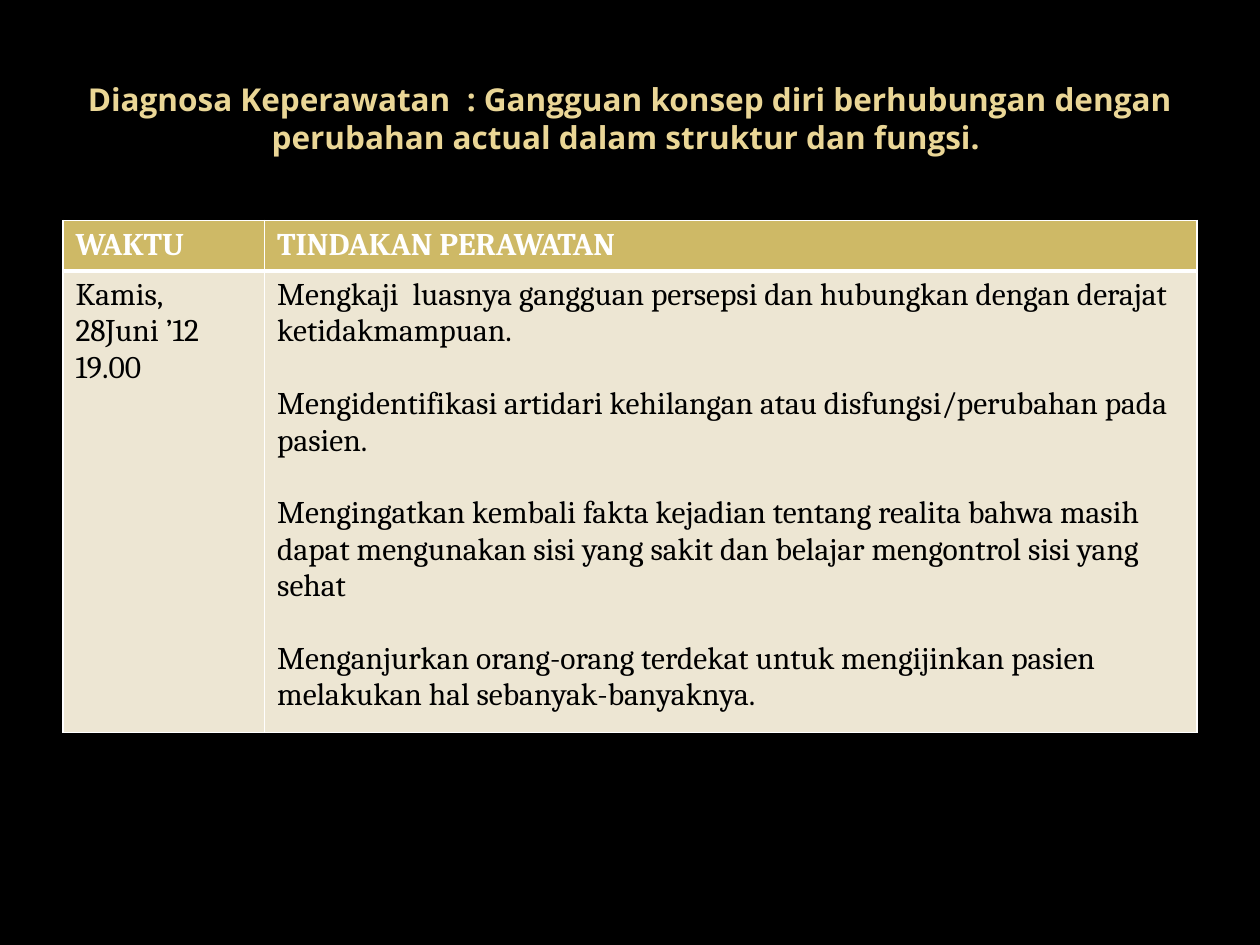
import pptx
import pptx.util
import pptx.dml.color
import pptx.enum.text
import pptx.oxml
import pptx.oxml.ns

RGBColor = pptx.dml.color.RGBColor
BLACK = RGBColor(0x00, 0x00, 0x00)
WHITE = RGBColor(0xFF, 0xFF, 0xFF)
CREAM = RGBColor(0xEA, 0xD6, 0x96)
GOLD = RGBColor(0xCE, 0xB9, 0x66)
SAND = RGBColor(0xED, 0xE6, 0xD3)

TITLE = ("Diagnosa Keperawatan  : Gangguan konsep diri berhubungan dengan "
         "perubahan actual dalam struktur dan fungsi. ")
HEADERS = ["WAKTU", "TINDAKAN PERAWATAN"]
TIME = ["Kamis,", "28Juni ’12", "19.00"]
ACTIONS = [
    "Mengkaji  luasnya gangguan persepsi dan hubungkan dengan derajat  ketidakmampuan.",
    "Mengidentifikasi artidari kehilangan atau disfungsi/perubahan pada pasien.",
    "Mengingatkan kembali fakta kejadian tentang realita bahwa masih dapat mengunakan "
    "sisi yang sakit dan belajar mengontrol sisi yang sehat",
    "Menganjurkan orang-orang terdekat untuk mengijinkan pasien melakukan hal "
    "sebanyak-banyaknya.",
]


class CareSlide:
    title_font = "Open Sans"
    table_font = "Cambria"
    text_size = pptx.util.Pt(18)
    paragraph_gap = pptx.util.Pt(20.75)
    thin, thick = 1, 3

    def __init__(self, presentation):
        self.width = presentation.slide_width
        self.height = presentation.slide_height
        self.slide = presentation.slides.add_slide(presentation.slide_layouts[6])
        self.slide.background.fill.solid()
        self.slide.background.fill.fore_color.rgb = BLACK

    def area(self, left, top, width, height):
        return (round(left * self.width), round(top * self.height),
                round(width * self.width), round(height * self.height))

    def add_text(self, frame, lines, font, color, bold=False, gap=0, alignment=None):
        for index, line in enumerate(lines):
            paragraph = frame.add_paragraph() if index else frame.paragraphs[0]
            paragraph.alignment = alignment
            if index and gap:
                paragraph.space_before = gap
            run = paragraph.add_run()
            run.text = line
            run.font.name = font
            run.font.size = self.text_size
            run.font.bold = bold
            run.font.color.rgb = color

    def title(self, text, *shares):
        frame = self.slide.shapes.add_textbox(*self.area(*shares)).text_frame
        frame.word_wrap = True
        frame.vertical_anchor = pptx.enum.text.MSO_ANCHOR.MIDDLE
        self.add_text(frame, [text], self.title_font, CREAM, bold=True,
                      alignment=pptx.enum.text.PP_ALIGN.CENTER)

    def border(self, cell, **points):
        properties = cell._tc.get_or_add_tcPr()
        for side, width in points.items():
            properties.append(pptx.oxml.parse_xml(
                f'<a:ln{side} {pptx.oxml.ns.nsdecls("a")} w="{pptx.util.Pt(width)}">'
                f'<a:solidFill><a:srgbClr val="{WHITE}"/></a:solidFill></a:ln{side}>'))

    def cell(self, cell, lines, header, gap=0):
        self.border(cell, L=self.thin, R=self.thin,
                    T=self.thin if header else self.thick,
                    B=self.thick if header else self.thin)
        cell.fill.solid()
        cell.fill.fore_color.rgb = GOLD if header else SAND
        self.add_text(cell.text_frame, lines, self.table_font,
                      WHITE if header else BLACK, bold=header, gap=gap)

    def table(self, headers, contents, gaps, column_shares, row_shares, left, top):
        area = self.area(left, top, sum(column_shares), sum(row_shares))
        table = self.slide.shapes.add_table(2, len(headers), *area).table
        for column, share in zip(table.columns, column_shares):
            column.width = round(share * self.width)
        for row, share in zip(table.rows, row_shares):
            row.height = round(share * self.height)
        for index, header in enumerate(headers):
            self.cell(table.cell(0, index), [header], True)
            self.cell(table.cell(1, index), contents[index], False, gaps[index])


def main():
    presentation = pptx.Presentation()
    presentation.slide_width = pptx.util.Inches(10)
    presentation.slide_height = pptx.util.Inches(7.5)
    care = CareSlide(presentation)
    care.title(TITLE, 0.05, 0.04, 0.9, 0.17)
    care.table(HEADERS, [TIME, ACTIONS], [0, care.paragraph_gap],
               column_shares=[0.16, 0.74], row_shares=[0.05, 0.48],
               left=0.05, top=1.75 / 7.5)
    presentation.save("out.pptx")


if __name__ == "__main__":
    main()
